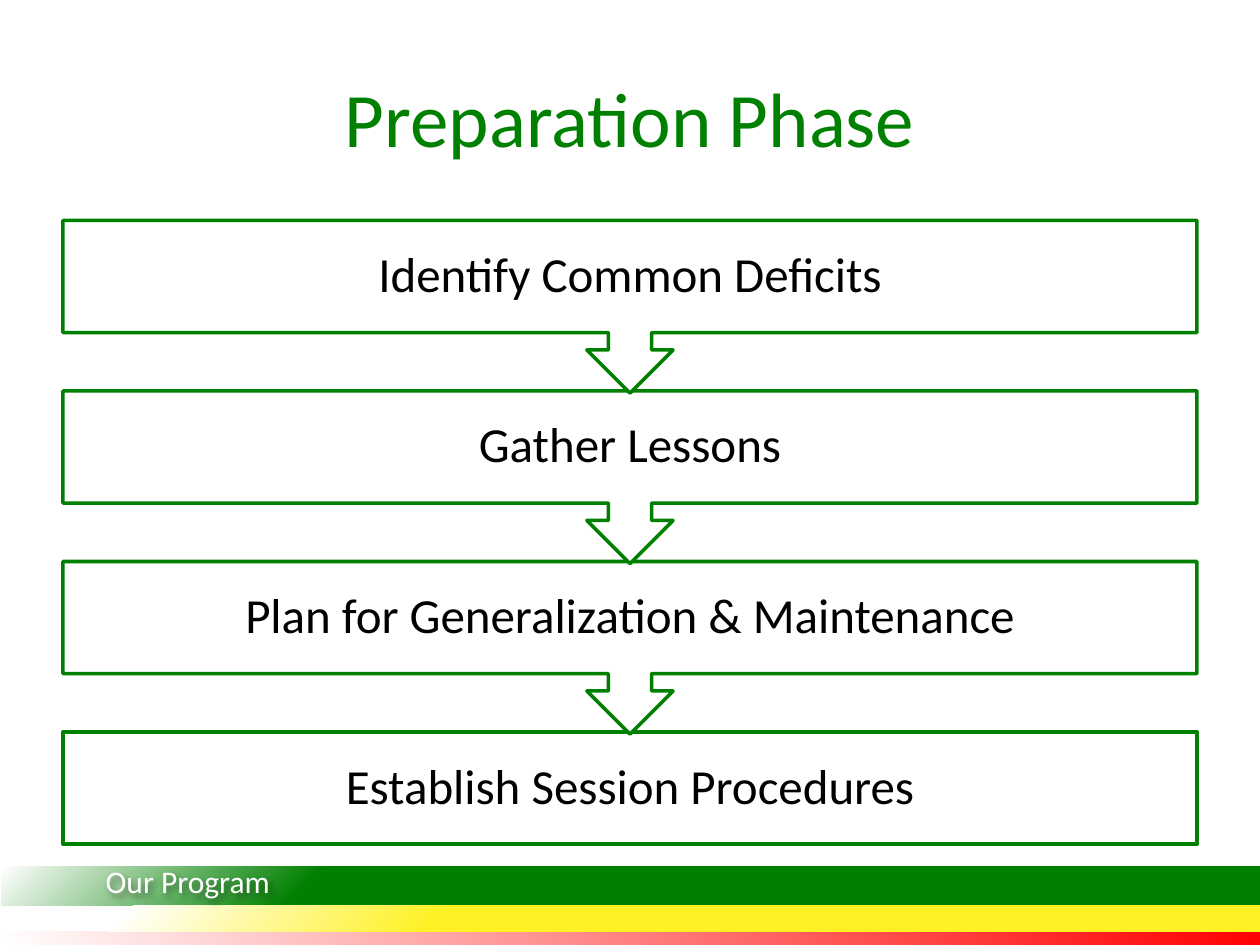
from lxml.etree import SubElement
from pptx import Presentation
from pptx.dml.color import RGBColor
from pptx.enum.shapes import MSO_SHAPE
from pptx.enum.text import MSO_ANCHOR, PP_ALIGN
from pptx.oxml.ns import qn
from pptx.util import Inches, Pt

# Content
TITLE = "Preparation Phase"
STEPS = [
    "Identify Common Deficits",
    "Gather Lessons",
    "Plan for Generalization & Maintenance",
    "Establish Session Procedures",
]
FOOTER = "Our Program"

THEME = {
    "font": "Calibri",
    "green": "008000", "yellow": "FFF123", "red": "FF0000",
    "white": "FFFFFF", "black": "000000",
    "title": 44, "step": 28, "footer": 18, "line": 2,
}

# Footer bands: top, height, colour, solid until %, white from %, gradient centre
BANDS = [
    (7.39, 0.12, "red", 0, 100, "top"),
    (6.88, 0.31, "green", 75, 100, "bottom"),
    (7.19, 0.20, "yellow", 65, 90, "bottom"),
]

# Layout in inches
LEFT, WIDTH = 0.5, 9
STEP_TOP, STEP_BOTTOM = 1.75, 6.7
BOX_HEIGHT, CALLOUT_HEIGHT = 0.89, 1.37
STEP_PITCH = (STEP_BOTTOM - BOX_HEIGHT - STEP_TOP) / (len(STEPS) - 1)


def color(name):
    return RGBColor.from_string(THEME[name])


def style_text(shape, size, color_name):
    for paragraph in shape.text_frame.paragraphs:
        for run in paragraph.runs:
            run.font.name = THEME["font"]
            run.font.size = Pt(THEME[size])
            run.font.color.rgb = color(color_name)


def add_title(slide):
    title = slide.shapes.title
    title.left, title.top = Inches(LEFT), Inches(0.3)
    title.width, title.height = Inches(WIDTH), Inches(1.25)
    title.text_frame.text = TITLE
    title.text_frame.vertical_anchor = MSO_ANCHOR.MIDDLE
    title.text_frame.paragraphs[0].alignment = PP_ALIGN.CENTER
    style_text(title, "title", "green")


def add_step(slide, index, text):
    is_last = index == len(STEPS) - 1
    kind = MSO_SHAPE.RECTANGLE if is_last else MSO_SHAPE.DOWN_ARROW_CALLOUT
    height = BOX_HEIGHT if is_last else CALLOUT_HEIGHT
    shape = slide.shapes.add_shape(
        kind, Inches(LEFT), Inches(STEP_TOP + index * STEP_PITCH),
        Inches(WIDTH), Inches(height))
    shape.shadow.inherit = False
    shape.fill.solid()
    shape.fill.fore_color.rgb = color("white")
    shape.line.color.rgb = color("green")
    shape.line.width = Pt(THEME["line"])

    frame = shape.text_frame
    frame.text = text
    frame.word_wrap = True
    frame.vertical_anchor = MSO_ANCHOR.MIDDLE
    frame.margin_left = frame.margin_right = Inches(0.22)
    frame.margin_top = frame.margin_bottom = Inches(0.22)
    frame.paragraphs[0].alignment = PP_ALIGN.CENTER
    frame.paragraphs[0].line_spacing = 0.9
    style_text(shape, "step", "black")


def add_band(slide, top, height, color_name, solid_until, white_from, centre):
    band = slide.shapes.add_shape(
        MSO_SHAPE.RECTANGLE, Inches(0.01), Inches(top), Inches(10), Inches(height))
    band.shadow.inherit = False
    band.line.fill.background()
    band.fill.gradient()
    stops = zip(band.fill.gradient_stops,
                [(solid_until, color_name), (white_from, "white")])
    for stop, (percent, name) in stops:
        stop.position = percent / 100
        stop.color.rgb = color(name)

    # Radial gradient that starts in a right-hand corner
    gradient = band.element.spPr.find(qn("a:gradFill"))
    gradient.remove(gradient.find(qn("a:lin")))
    radial = SubElement(gradient, qn("a:path"), {"path": "circle"})
    vertical = {"t": "100000"} if centre == "bottom" else {"b": "100000"}
    SubElement(radial, qn("a:fillToRect"), {"l": "100000", **vertical})


def add_footer_text(slide):
    box = slide.shapes.add_textbox(
        Inches(0.74), Inches(6.79), Inches(1.92), Inches(0.4))
    box.text_frame.word_wrap = True
    box.text_frame.text = FOOTER
    style_text(box, "footer", "white")

    # Soft shadow behind the letters
    effects = SubElement(box.element.spPr, qn("a:effectLst"))
    shadow = SubElement(effects, qn("a:outerShdw"), {
        "blurRad": str(Pt(4)), "dist": str(Pt(3)), "dir": "2700000"})
    tint = SubElement(shadow, qn("a:srgbClr"), {"val": THEME["black"]})
    SubElement(tint, qn("a:alpha"), {"val": "40000"})


def main():
    presentation = Presentation()
    presentation.slide_width, presentation.slide_height = Inches(10), Inches(7.5)
    slide = presentation.slides.add_slide(presentation.slide_layouts[5])
    add_title(slide)
    # Last step first, so each arrow tip lies over the next box
    for index, text in reversed(list(enumerate(STEPS))):
        add_step(slide, index, text)
    for band in BANDS:
        add_band(slide, *band)
    add_footer_text(slide)
    presentation.save("out.pptx")


if __name__ == "__main__":
    main()
